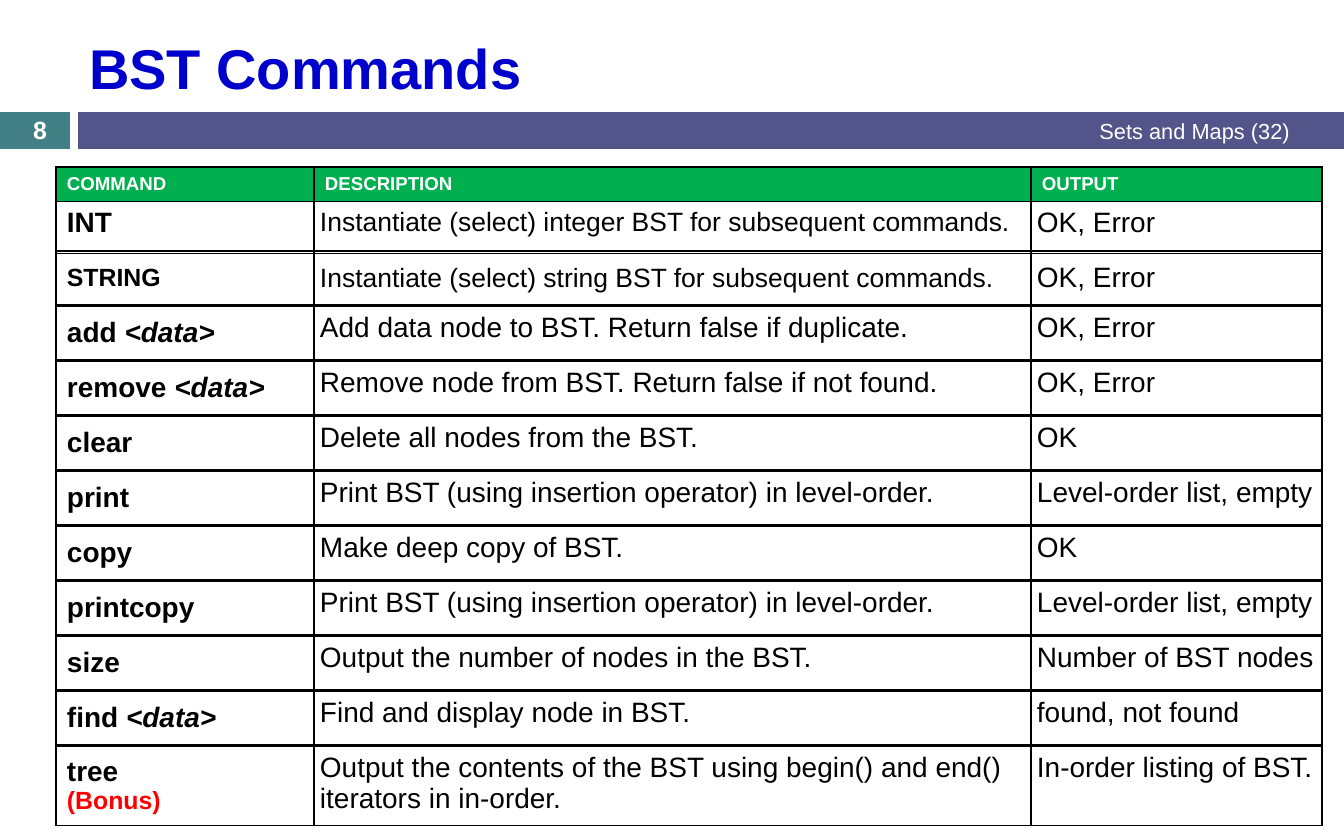
from lxml import etree
from pptx import Presentation
from pptx.dml.color import RGBColor
from pptx.enum.shapes import MSO_SHAPE as SHAPE
from pptx.enum.text import MSO_ANCHOR as ANCHOR, PP_ALIGN as ALIGN
from pptx.oxml.ns import qn
from pptx.util import Pt

PX = 914400 / 112
FONT = "Arial"
BLACK = RGBColor(0, 0, 0)
WHITE = RGBColor(255, 255, 255)
BLUE = RGBColor(0x00, 0x00, 0xCC)
RED = RGBColor(0xFF, 0x00, 0x00)
GREEN = RGBColor(0x00, 0xB0, 0x50)
TEAL = RGBColor(0x43, 0x80, 0x86)
PURPLE = RGBColor(0x53, 0x54, 0x8A)

# Table grid
LEFT, COLS = 56, (258, 717, 291)
FIRST_TOP, HEADER_H, INT_H = 167, 31, 52
TOP, PITCH, ROW_H, TREE_H = 251, 55, 54, 67

HEADER = ("COMMAND", "DESCRIPTION", "OUTPUT")
# Command, argument, description, output
COMMANDS = [
    ("add ", "<data>", "Add data node to BST. Return false if duplicate.", "OK, Error"),
    ("remove ", "<data>", "Remove node from BST. Return false if not found.", "OK, Error"),
    ("clear", "", "Delete all nodes from the BST.", "OK"),
    ("print", "", "Print BST (using insertion operator) in level-order.",
     "Level-order list, empty"),
    ("copy", "", "Make deep copy of BST.", "OK"),
    ("printcopy", "", "Print BST (using insertion operator) in level-order.",
     "Level-order list, empty"),
    ("size", "", "Output the number of nodes in the BST.", "Number of BST nodes"),
    ("find ", "<data>", "Find and display node in BST.", "found, not found"),
]


def emu(px):
    return round(px * PX)


def add_text(p, text, size=18, color=BLACK, bold=False, italic=False):
    r = p.add_run()
    r.text = text
    f = r.font
    f.name, f.size, f.bold, f.italic = FONT, Pt(size), bold, italic
    f.color.rgb = color


class Deck:
    def __init__(self, slide, border=BLACK, border_pt=1):
        self.slide = slide
        self.border, self.border_pt = border, border_pt

    def bar(self, x, y, w, h, color):
        sp = self.slide.shapes.add_shape(SHAPE.RECTANGLE, *map(emu, (x, y, w, h)))
        sp.shadow.inherit = False
        sp.fill.solid()
        sp.fill.fore_color.rgb = color
        sp.line.fill.background()

    def label(self, x, y, w, h, text, align=ALIGN.LEFT, **fmt):
        sp = self.slide.shapes.add_textbox(*map(emu, (x, y, w, h)))
        tf = sp.text_frame
        tf.word_wrap = True
        tf.vertical_anchor = ANCHOR.MIDDLE
        tf.paragraphs[0].alignment = align
        add_text(tf.paragraphs[0], text, **fmt)

    def table(self, y, heights):
        frame = self.slide.shapes.add_table(
            len(heights), len(COLS), *map(emu, (LEFT, y, sum(COLS), sum(heights))))
        table = frame.table
        table.first_row = table.horz_banding = False
        for col, w in zip(table.columns, COLS):
            col.width = emu(w)
        for row, h in zip(table.rows, heights):
            row.height = emu(h)
        return table

    def cell(self, cell, lines, fill=None, anchor=ANCHOR.TOP, tight=False):
        """Each line is a list of (text, format) runs."""
        tc_pr = cell._tc.get_or_add_tcPr()
        for side in ("lnL", "lnR", "lnT", "lnB"):
            ln = etree.SubElement(tc_pr, qn(f"a:{side}"), w=str(Pt(self.border_pt)))
            solid = etree.SubElement(ln, qn("a:solidFill"))
            etree.SubElement(solid, qn("a:srgbClr"), val=str(self.border))
        if fill is None:
            cell.fill.background()
        else:
            cell.fill.solid()
            cell.fill.fore_color.rgb = fill
        cell.vertical_anchor = anchor
        cell.margin_left = cell.margin_right = emu(6 if tight else 11)
        cell.margin_top = cell.margin_bottom = emu(6)
        tf = cell.text_frame
        for i, runs in enumerate(lines):
            p = tf.add_paragraph() if i else tf.paragraphs[0]
            for text, fmt in runs:
                add_text(p, text, **fmt)

    def command_row(self, row, name_lines, description, output, fill=None,
                    name_anchor=ANCHOR.MIDDLE, anchor=ANCHOR.TOP, size=18):
        name, desc, out = row.cells
        self.cell(name, name_lines, fill, name_anchor)
        self.cell(desc, [[(description, {"size": size})]], fill, anchor, tight=True)
        self.cell(out, [[(output, {})]], fill, anchor, tight=True)


def main():
    prs = Presentation()
    prs.slide_width, prs.slide_height = emu(1344), emu(840)
    s = Deck(prs.slides.add_slide(prs.slide_layouts[6]))
    bold = {"bold": True}

    # Title and banner
    s.bar(0, 112, 70, 37, TEAL)
    s.bar(78, 112, 1266, 37, PURPLE)
    s.label(78, 22, 1222, 90, "BST Commands", size=36, color=BLUE, bold=True)
    s.label(691, 112, 610, 37, "Sets and Maps (32)", ALIGN.RIGHT, size=14, color=WHITE)
    s.label(0, 113, 80, 34, "8", ALIGN.CENTER, size=16, color=WHITE, bold=True)

    # Header and INT
    table = s.table(FIRST_TOP, [HEADER_H, INT_H])
    for cell, text in zip(table.rows[0].cells, HEADER):
        s.cell(cell, [[(text, {"size": 12, "color": WHITE, "bold": True})]],
               GREEN, ANCHOR.MIDDLE)
    s.command_row(table.rows[1], [[("INT", bold)]],
                  "Instantiate (select) integer BST for subsequent commands.",
                  "OK, Error", name_anchor=ANCHOR.TOP, size=17)

    # STRING
    s.command_row(s.table(TOP, [ROW_H]).rows[0],
                  [[("STRING", {"size": 16, "bold": True})]],
                  "Instantiate (select) string BST for subsequent commands.",
                  "OK, Error", anchor=ANCHOR.MIDDLE, size=17)

    # Regular commands, one table each
    for i, (name, arg, description, output) in enumerate(COMMANDS, 1):
        runs = [(name, bold)]
        if arg:
            runs.append((arg, {"bold": True, "italic": True}))
        s.command_row(s.table(TOP + i * PITCH, [ROW_H]).rows[0], [runs],
                      description, output, fill=None if name == "add " else WHITE)

    # Bonus command
    y = TOP + (len(COMMANDS) + 1) * PITCH
    s.command_row(s.table(y, [TREE_H]).rows[0],
                  [[("tree", bold)],
                   [("(Bonus)", {"size": 16, "color": RED, "bold": True})]],
                  "Output the contents of the BST using begin() and end() "
                  "iterators in in-order.",
                  "In-order listing of BST.", fill=WHITE)

    prs.save("out.pptx")


if __name__ == "__main__":
    main()
